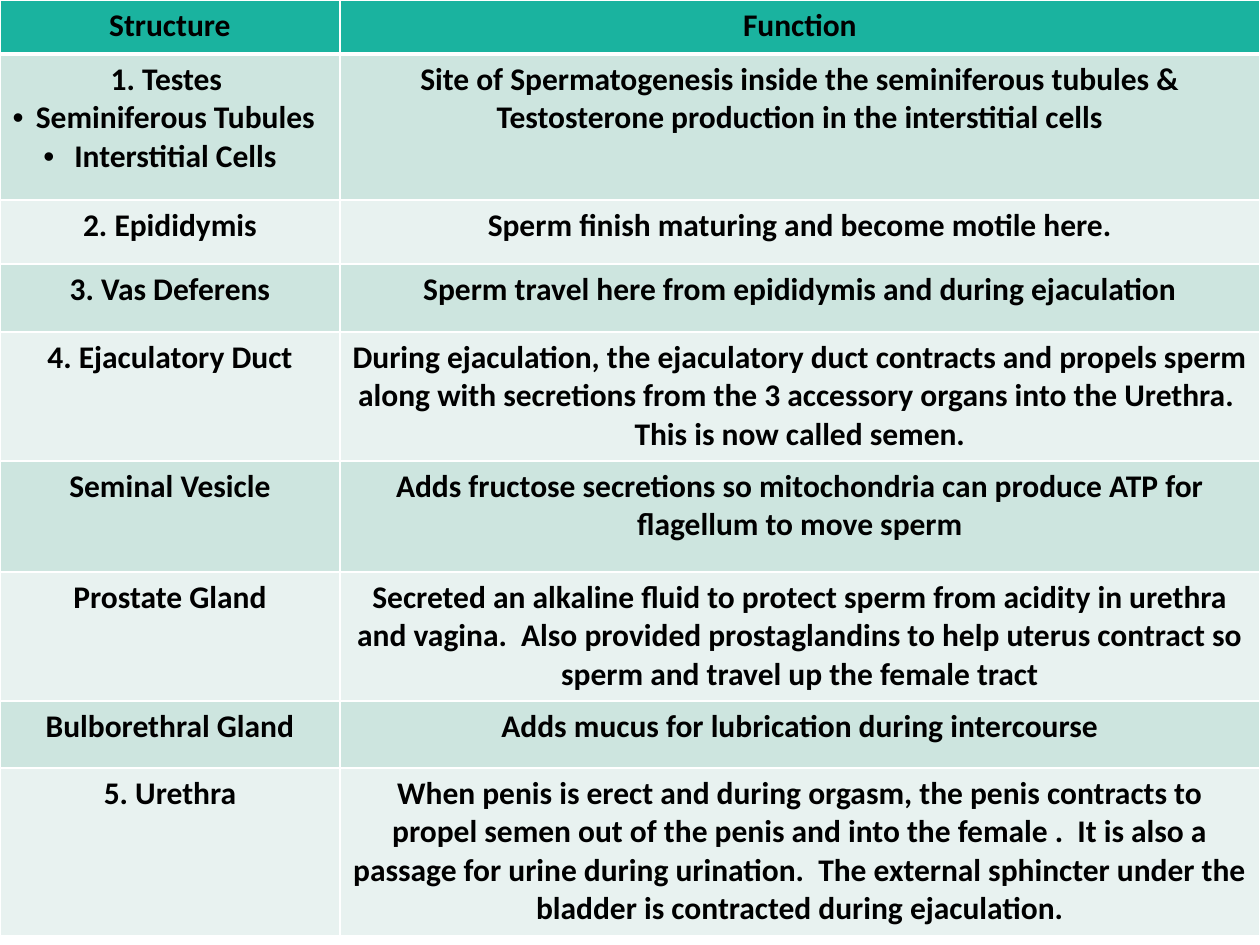
from pptx import Presentation
from pptx.dml.color import RGBColor
from pptx.enum.text import PP_ALIGN
from pptx.oxml import parse_xml
from pptx.oxml.ns import nsdecls
from pptx.util import Emu, Pt

PX = 914400 // 126
HEADER, BAND_DARK, BAND_LIGHT = "1AB39F", "CDE5DF", "E8F2F0"
COL_WIDTHS = [340, 920]
ROWS = [  # height, structure, function
    (54, "Structure", "Function"),
    (146, "1. Testes \n• Seminiferous Tubules\n• Interstitial Cells",
     "Site of Spermatogenesis inside the seminiferous tubules & "
     "Testosterone production in the interstitial cells"),
    (64, "2. Epididymis", "Sperm finish maturing and become motile here."),
    (68, "3. Vas Deferens", "Sperm travel here from epididymis and during ejaculation"),
    (129, "4. Ejaculatory Duct",
     "During ejaculation, the ejaculatory duct contracts and propels sperm along with "
     "secretions from the 3 accessory organs into the Urethra.  This is now called semen."),
    (111, "Seminal Vesicle",
     "Adds fructose secretions so mitochondria can produce ATP for flagellum to move sperm"),
    (129, "Prostate Gland",
     "Secreted an alkaline fluid to protect sperm from acidity in urethra and vagina.  "
     "Also provided prostaglandins to help uterus contract so sperm and travel up the "
     "female tract"),
    (67, "Bulborethral Gland", "Adds mucus for lubrication during intercourse"),
    (168, "5. Urethra",
     "When penis is erect and during orgasm, the penis contracts to propel semen out of "
     "the penis and into the female .  It is also a passage for urine during urination.  "
     "The external sphincter under the bladder is contracted during ejaculation."),
]


def style_cell(cell, fill, top, bottom):
    """Fill the cell and give it white borders; top and bottom are widths in points."""
    tc_pr = cell._tc.get_or_add_tcPr()
    for side, width in (("L", 1), ("R", 1), ("T", top), ("B", bottom)):
        tc_pr.append(parse_xml(
            f'<a:ln{side} {nsdecls("a")} w="{Pt(width)}"><a:solidFill>'
            f'<a:srgbClr val="FFFFFF"/></a:solidFill></a:ln{side}>'))
    cell.fill.solid()
    cell.fill.fore_color.rgb = RGBColor.from_string(fill)


def add_bullet(p):
    p_pr = p._p.get_or_add_pPr()
    p_pr.set("marL", str(10 * PX))
    p_pr.set("indent", str(-31 * PX))
    p_pr.append(parse_xml(f'<a:buFont {nsdecls("a")} typeface="Arial"/>'))
    p_pr.append(parse_xml(f'<a:buChar {nsdecls("a")} char="•"/>'))


prs = Presentation()
prs.slide_width, prs.slide_height = Emu(1260 * PX), Emu(945 * PX)
slide = prs.slides.add_slide(prs.slide_layouts[6])

table_height = sum(row[0] for row in ROWS)
table = slide.shapes.add_table(len(ROWS), len(COL_WIDTHS), 0, 0,
                               Emu(sum(COL_WIDTHS) * PX), Emu(table_height * PX)).table
for column, width in zip(table.columns, COL_WIDTHS):
    column.width = Emu(width * PX)

for i, (height, *texts) in enumerate(ROWS):
    table.rows[i].height = Emu(height * PX)
    fill = HEADER if i == 0 else BAND_DARK if i % 2 else BAND_LIGHT
    for j, text in enumerate(texts):
        cell = table.cell(i, j)
        style_cell(cell, fill, top=3 if i == 1 else 1, bottom=3 if i == 0 else 1)
        tf = cell.text_frame
        for n, line in enumerate(text.split("\n")):
            p = tf.add_paragraph() if n else tf.paragraphs[0]
            p.alignment = PP_ALIGN.CENTER
            if line.startswith("• "):
                add_bullet(p)
            r = p.add_run()
            r.text = line.removeprefix("• ")
            r.font.name, r.font.size, r.font.bold = "Calibri", Pt(18), True
            r.font.color.rgb = RGBColor.from_string("000000")

prs.save("out.pptx")
